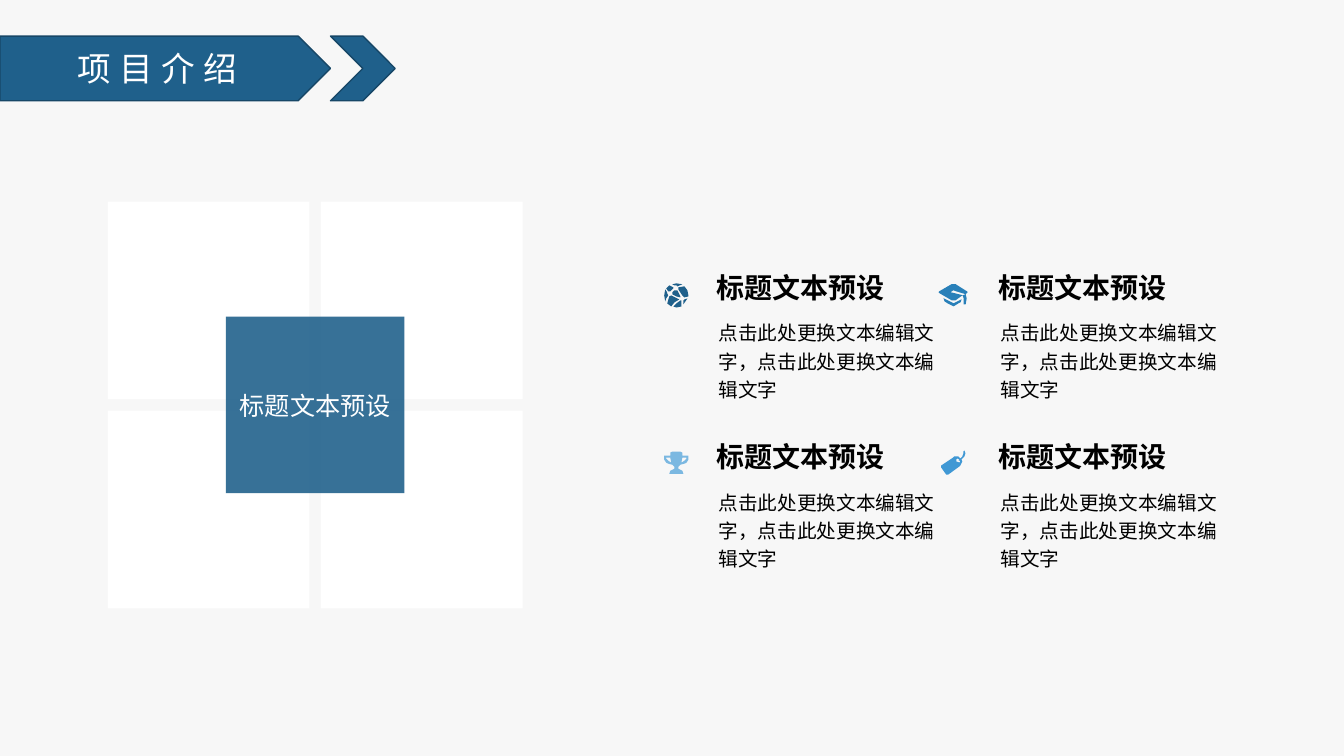
from lxml import etree
from pptx import Presentation
from pptx.dml.color import RGBColor
from pptx.enum.shapes import MSO_SHAPE as Shape
from pptx.enum.text import MSO_ANCHOR as Anchor, PP_ALIGN as Align
from pptx.oxml.ns import qn
from pptx.util import Cm, Pt

FONT = "Noto Sans CJK SC"
BLUE, NAVY, WHITE, BLACK, PALE = "1F608B", "174767", "FFFFFF", "000000", "F7F7F7"
WIDTH, HEIGHT = 33.87, 19.05
HEADING = "标题文本预设"
BODY = "点击此处更换文本编辑文字，点击此处更换文本编辑文字"

# Icon outlines on a grid of 0.0254 cm, one list per contour
GLOBE = [
    [(16, 17), (12, 20), (9, 23), (12, 24), (17, 23), (17, 19), (17, 17)],
    [(20, 3), (14, 4), (14, 6), (18, 12), (20, 14), (24, 13), (24, 12), (23, 7)],
    [(15, 16), (7, 12), (5, 13), (3, 20), (7, 23), (10, 19)],
    [(19, 17), (19, 21), (23, 15), (20, 16)],
    [(16, 14), (16, 13), (13, 7), (10, 7), (8, 9), (8, 11), (12, 13)],
    [(12, 2), (13, 3), (18, 1), (12, 0), (8, 1), (10, 2)],
    [(3, 10), (3, 9), (1, 6), (0, 12), (1, 18), (2, 15), (4, 12)],
    [(6, 8), (9, 5), (9, 4), (5, 2), (2, 5), (4, 8)],
]
CAP = [
    [(25, 20), (27, 20), (28, 14), (27, 10), (24, 11), (25, 14)],
    [(28, 7), (17, 0), (13, 0), (1, 7), (0, 8), (1, 9), (13, 16), (17, 16),
     (24, 11), (16, 9), (12, 8), (15, 6), (17, 7), (27, 10), (29, 8)],
    [(5, 14), (6, 17), (9, 19), (15, 22), (20, 19), (22, 18), (23, 15), (15, 19)],
]
TROPHY = [
    [(24, 4), (18, 4), (18, 1), (16, 0), (8, 0), (6, 1), (6, 4), (0, 4), (0, 8),
     (2, 11), (4, 12), (8, 13), (10, 15), (10, 17), (8, 18), (6, 19), (5, 22),
     (19, 22), (18, 19), (16, 18), (14, 17), (14, 15), (16, 13), (20, 12),
     (22, 11), (24, 8)],
    [(22, 7), (20, 9), (17, 11), (18, 6), (22, 6)],
    [(2, 7), (4, 9), (7, 11), (6, 6), (2, 6)],
]
TAG = [
    [(23, 0), (22, 1), (22, 3), (21, 6), (19, 8), (17, 6), (13, 6), (12, 7),
     (0, 15), (0, 17), (5, 24), (7, 24), (18, 16), (19, 15), (21, 11), (20, 9),
     (23, 6), (24, 3)],
    [(18, 12), (15, 11), (15, 9), (16, 8), (18, 9), (17, 10), (18, 10), (19, 11)],
]


def rgb(color):
    return RGBColor.from_string(color)


class Deck:
    def __init__(self):
        self.presentation = Presentation()
        self.presentation.slide_width = Cm(WIDTH)
        self.presentation.slide_height = Cm(HEIGHT)
        layout = self.presentation.slide_layouts[6]
        self.shapes = self.presentation.slides.add_slide(layout).shapes

    def paint(self, shape, fill, line=None):
        shape.shadow.inherit = False
        shape.fill.solid()
        shape.fill.fore_color.rgb = rgb(fill)
        if line:
            shape.line.color.rgb = rgb(line)
            shape.line.width = Pt(1)
        else:
            shape.line.fill.background()

    def block(self, kind, left, top, width, height, fill, line=None):
        shape = self.shapes.add_shape(kind, Cm(left), Cm(top), Cm(width), Cm(height))
        self.paint(shape, fill, line)
        return shape

    def fade(self, shape, percent):
        """Set the opacity of a solid fill."""
        color = shape.element.spPr.find(qn("a:solidFill"))[0]
        etree.SubElement(color, qn("a:alpha")).set("val", str(percent * 1000))

    def set_text(self, shape, text, size, color, bold=False, align=None, spacing=None):
        """Put one styled paragraph in a shape; spacing is between letters, in points."""
        shape.text_frame.text = text
        paragraph = shape.text_frame.paragraphs[0]
        paragraph.alignment = align
        run = paragraph.runs[0]
        run.font.name = FONT
        run.font.size = Pt(size)
        run.font.bold = bold
        run.font.color.rgb = rgb(color)
        properties = run._r.get_or_add_rPr()
        etree.SubElement(properties, qn("a:ea")).set("typeface", FONT)
        if spacing:
            properties.set("spc", str(spacing * 100))
        return paragraph

    def label(self, shape, text, size, wrap=True, spacing=None):
        """Centre white text in a filled shape."""
        shape.text_frame.word_wrap = wrap
        shape.text_frame.vertical_anchor = Anchor.MIDDLE
        self.set_text(shape, text, size, WHITE, align=Align.CENTER, spacing=spacing)

    def text(self, left, top, width, height, text, size, bold=False, wrap=True):
        box = self.shapes.add_textbox(Cm(left), Cm(top), Cm(width), Cm(height))
        frame = box.text_frame
        frame.margin_left = frame.margin_right = frame.margin_top = frame.margin_bottom = 0
        frame.word_wrap = wrap
        return self.set_text(box, text, size, BLACK, bold)

    def icon(self, left, top, contours, color):
        builder = self.shapes.build_freeform(*contours[0][0], scale=Cm(0.0254))
        for index, contour in enumerate(contours):
            if index:
                builder.move_to(*contour[0])
            builder.add_line_segments(contour[1:], close=True)
        self.paint(builder.convert_to_shape(Cm(left), Cm(top)), color)


def add_banner(deck):
    top, height, ribbon_width = 0.91, 1.63, 8.33
    ribbon = deck.block(Shape.PENTAGON, 0, top, ribbon_width, height, BLUE, NAVY)
    deck.label(ribbon, "项目介绍", 24, spacing=6)
    deck.block(Shape.CHEVRON, ribbon_width, top, height, height, BLUE, NAVY)


def add_tiles(deck):
    left, top, width, height, gap = 2.72, 5.08, 5.08, 4.98, 0.29
    for row in range(2):
        for column in range(2):
            deck.block(Shape.RECTANGLE, left + column * (width + gap),
                       top + row * (height + gap), width, height, WHITE)
    center_width, center_height = 4.5, 4.45
    center = deck.block(Shape.RECTANGLE, left + width + (gap - center_width) / 2,
                        top + height + (gap - center_height) / 2,
                        center_width, center_height, BLUE)
    deck.fade(center, 89)
    deck.label(center, HEADING, 18, wrap=False)


def add_features(deck):
    icons = [
        (16.74, 7.14, GLOBE, BLUE),
        (23.65, 7.16, CAP, "2980B9"),
        (16.74, 11.38, TROPHY, "7BB8E1"),
        (23.72, 11.35, TAG, "4098D4"),
    ]
    for index, icon in enumerate(icons):
        row, column = divmod(index, 2)
        left, top = 18.06 + column * 7.11, 6.81 + row * 4.27
        deck.icon(*icon)
        body = deck.text(left + 0.05, top + 1.17, 5.61, 2.72, BODY, 14)
        body.line_spacing = 1.2
        deck.text(left, top, 4.72, 0.86, HEADING, 20, bold=True, wrap=False)


def main():
    deck = Deck()
    deck.block(Shape.RECTANGLE, 0, 0, WIDTH, HEIGHT, PALE)
    add_banner(deck)
    add_tiles(deck)
    add_features(deck)
    deck.presentation.save("out.pptx")


if __name__ == "__main__":
    main()
